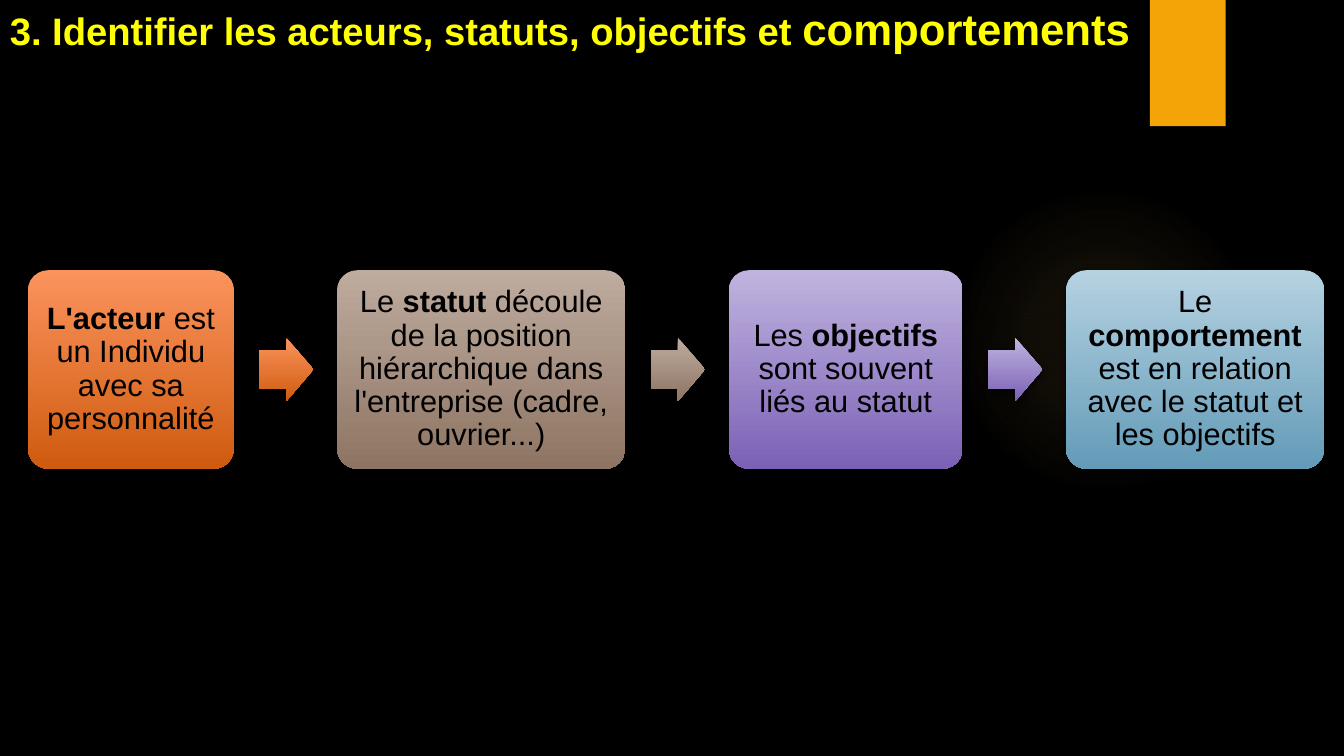
from dataclasses import dataclass

from lxml import etree
from pptx import Presentation
from pptx import util as u
from pptx.dml import color
from pptx.enum import shapes, text
from pptx.oxml import ns

Cm = u.Cm
KIND = shapes.MSO_SHAPE


@dataclass(frozen=True)
class Theme:
    back: str = "000000"
    ink: str = "000000"
    title: str = "FFFF00"
    tab: str = "F5A408"
    glow: str = "FAC96A"
    font: str = "Arial"
    body: float = 22
    head: float = 27.3
    big: float = 31.2


THEME = Theme()

# Each step: width in cm, top and bottom colour, runs as (words, bold)
STEPS = [
    (5.18, ("FB935D", "CF5B0F"),
     [("L'acteur", True), (" est un Individu avec sa personnalité", False)]),
    (7.26, ("BEAC9F", "8E7463"),
     [("Le ", False), ("statut", True),
      (" découle de la position hiérarchique dans l'entreprise "
       "(cadre, ouvrier...)", False)]),
    (5.89, ("C0B3DF", "7B61B6"),
     [("Les ", False), ("objectifs", True),
      (" sont souvent liés au statut", False)]),
    (6.5, ("B5D2E1", "639BB8"),
     [("Le ", False), ("comportement", True),
      (" est en relation avec le statut et les objectifs", False)]),
]


def rgb(code):
    return color.RGBColor.from_string(code)


def apply(obj, **vals):
    for key, val in vals.items():
        setattr(obj, key, val)


def add_xml(up, tag, **vals):
    return etree.SubElement(up, ns.qn(tag), {k: str(v) for k, v in vals.items()})


def add_tint(up, code, alpha):
    tint = add_xml(up, "a:srgbClr", val=code)
    add_xml(tint, "a:alpha", val=alpha * 1000)


def add_form(slide, kind, box, adjs=()):
    """Add a preset shape without line or shadow."""
    form = slide.shapes.add_shape(kind, *map(Cm, box))
    form.shadow.inherit = False
    form.line.fill.background()
    for i, adj in enumerate(adjs):
        form.adjustments[i] = adj
    return form


def add_shade(form, alpha, blur, dist):
    """Cast a soft black shadow straight down."""
    effects = form._element.spPr.find(ns.qn("a:effectLst"))
    shade = add_xml(effects, "a:outerShdw", blurRad=u.Pt(blur),
                    dist=u.Pt(dist), dir=5400000, rotWithShape=0)
    add_tint(shade, "000000", alpha)


def fill_down(form, pair):
    """Fill from the first colour at the top to the second below."""
    form.fill.gradient()
    form.fill.gradient_angle = 270
    for stop, code, pos in zip(form.fill.gradient_stops, pair, (0, 1)):
        apply(stop, position=pos)
        stop.color.rgb = rgb(code)


def add_runs(para, runs, tone):
    for words, size, bold in runs:
        run = para.add_run()
        run.text = words
        apply(run.font, name=THEME.font, size=u.Pt(size), bold=bold)
        run.font.color.rgb = rgb(tone)


def draw_decor(slide, glow, tab):
    # Faint round glow
    form = add_form(slide, KIND.OVAL, glow)
    form.fill.gradient()
    grad = form._element.spPr.find(ns.qn("a:gradFill"))
    for child in list(grad):
        grad.remove(child)
    stops = add_xml(grad, "a:gsLst")
    for pos, alpha in ((0, 7), (36, 6), (69, 0)):
        add_tint(add_xml(stops, "a:gs", pos=pos * 1000), THEME.glow, alpha)
    way = add_xml(grad, "a:path", path="circle")
    add_xml(way, "a:fillToRect", l=50000, t=50000, r=50000, b=50000)

    # Tab at the top edge
    form = add_form(slide, KIND.RECTANGLE, tab)
    form.fill.solid()
    form.fill.fore_color.rgb = rgb(THEME.tab)
    add_shade(form, 45, 3, 2)


def draw_title(slide, box):
    frame = slide.shapes.add_textbox(*map(Cm, box)).text_frame
    apply(frame, word_wrap=True, vertical_anchor=text.MSO_ANCHOR.BOTTOM)
    add_runs(frame.paragraphs[0], [
        ("3. Identifier les acteurs, statuts, objectifs et ", THEME.head, True),
        ("comportements", THEME.big, True),
    ], THEME.title)


def draw_card(slide, box, pair, runs):
    card = add_form(slide, KIND.ROUNDED_RECTANGLE, box, [0.1])
    fill_down(card, pair)
    add_shade(card, 60, 5, 3)
    frame = card.text_frame
    sides = ("left", "top", "right", "bottom")
    apply(frame, word_wrap=True, vertical_anchor=text.MSO_ANCHOR.MIDDLE,
          **{f"margin_{side}": Cm(0.23) for side in sides})
    para = frame.paragraphs[0]
    apply(para, alignment=text.PP_ALIGN.CENTER, line_spacing=0.9)
    add_runs(para, [(words, THEME.body, bold) for words, bold in runs], THEME.ink)


def draw_arrow(slide, box, pair):
    arrow = add_form(slide, KIND.RIGHT_ARROW, box, [0.6, 0.5])
    fill_down(arrow, pair)
    add_shade(arrow, 60, 5, 3)


def draw_flow(slide, box):
    """Lay cards from left to right, with an arrow in each gap."""
    left, top, wide, high = box
    gap = (wide - sum(step[0] for step in STEPS)) / (len(STEPS) - 1)
    arrow_w, arrow_h = 1.37, 1.6
    for i, (width, pair, runs) in enumerate(STEPS):
        draw_card(slide, (left, top, width, high), pair, runs)
        left += width
        if i < len(STEPS) - 1:
            spot = (left + 0.64, top + (high - arrow_h) / 2, arrow_w, arrow_h)
            draw_arrow(slide, spot, pair)
        left += gap


def main():
    deck = Presentation()
    apply(deck, slide_width=Cm(33.87), slide_height=Cm(19.05))
    slide = deck.slides.add_slide(deck.slide_layouts[6])
    slide.background.fill.solid()
    slide.background.fill.fore_color.rgb = rgb(THEME.back)
    draw_decor(slide, (23.9, 4.65, 7.82, 7.82), (28.98, 0, 1.91, 3.18))
    draw_title(slide, (0, 0, 33.38, 1.5))
    draw_flow(slide, (0.71, 6.81, 32.66, 5))
    deck.save("out.pptx")


if __name__ == "__main__":
    main()
